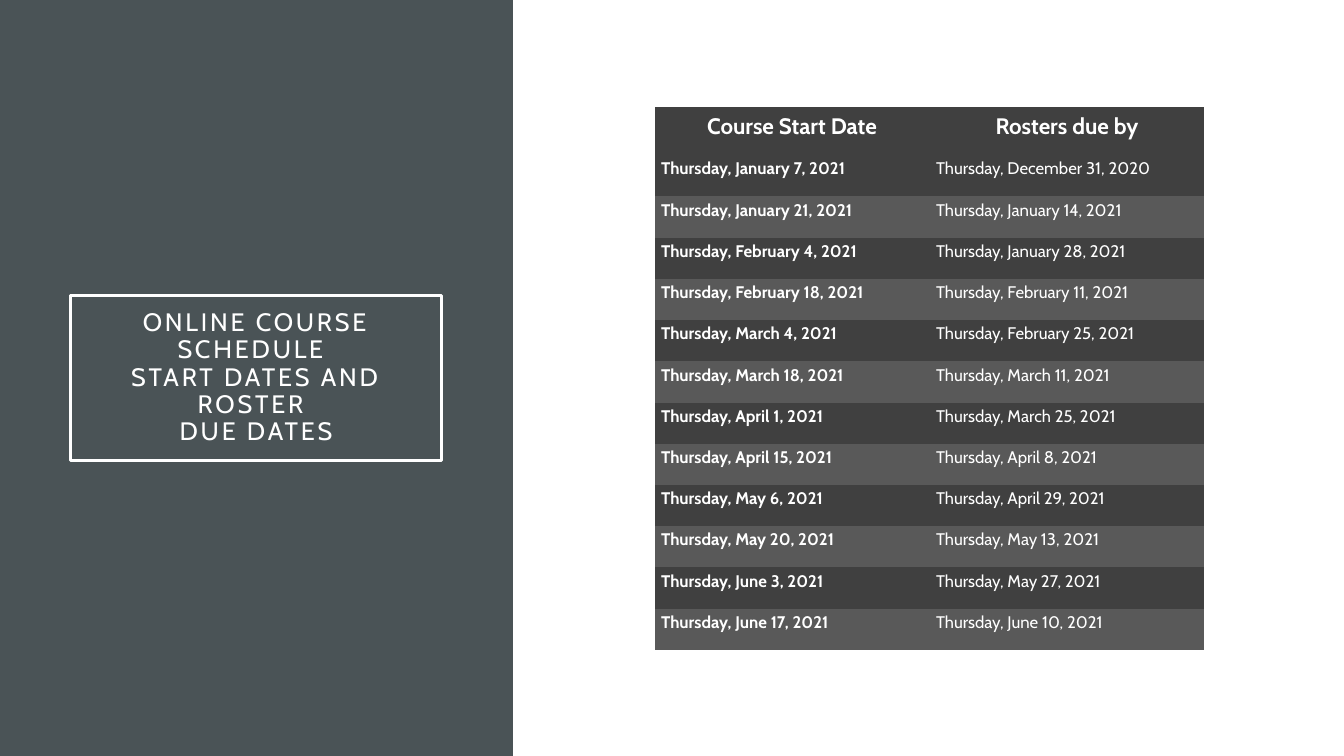
from lxml import etree
from pptx import Presentation
from pptx.dml.color import RGBColor
from pptx.enum import shapes, text
from pptx.oxml import parse_xml
from pptx.oxml.ns import nsdecls, qn
from pptx.util import Cm, Pt

WHITE = RGBColor(0xFF, 0xFF, 0xFF)
SLATE = RGBColor(0x4A, 0x53, 0x56)
DARK = RGBColor(0x40, 0x40, 0x40)
GREY = RGBColor(0x59, 0x59, 0x59)
FACE = "Cabin"
PLAIN = "{2D5ABB26-0587-4C30-8999-92F81FD0307C}"
TITLE = ["ONLINE COURSE SCHEDULE ", "START DATES AND ROSTER ", "DUE DATES"]
DATES = [
    ("Course Start Date", "Rosters due by"),
    ("Thursday, January 7, 2021", "Thursday, December 31, 2020"),
    ("Thursday, January 21, 2021", "Thursday, January 14, 2021"),
    ("Thursday, February 4, 2021", "Thursday, January 28, 2021"),
    ("Thursday, February 18, 2021", "Thursday, February 11, 2021"),
    ("Thursday, March 4, 2021", "Thursday, February 25, 2021"),
    ("Thursday, March 18, 2021", "Thursday, March 11, 2021"),
    ("Thursday, April 1, 2021", "Thursday, March 25, 2021"),
    ("Thursday, April 15, 2021", "Thursday, April 8, 2021"),
    ("Thursday, May 6, 2021", "Thursday, April 29, 2021"),
    ("Thursday, May 20, 2021", "Thursday, May 13, 2021"),
    ("Thursday, June 3, 2021", "Thursday, May 27, 2021"),
    ("Thursday, June 17, 2021", "Thursday, June 10, 2021"),
]


def add_run(para, words, size, bold=False):
    """Add one white run to a paragraph and return it."""
    run = para.add_run()
    run.text = words
    font = run.font
    font.name, font.size, font.bold = FACE, Pt(size), bold
    font.color.rgb = WHITE
    return run


def add_panel(slide, left, top, width, height):
    """Draw the slate panel with the framed title on it."""
    panel = slide.shapes.add_shape(
        shapes.MSO_SHAPE.RECTANGLE, left, top, width, height)
    panel.shadow.inherit = False
    panel.fill.solid()
    panel.fill.fore_color.rgb = SLATE
    panel.line.fill.background()

    title = slide.shapes.title
    panel._element.addnext(title._element)
    title.left, title.top = left + Cm(1.78), top + Cm(7.44)
    title.width, title.height = width - Cm(3.58), Cm(4.17)
    title.line.color.rgb = WHITE
    title.line.width = Pt(2.5)
    frame = title.text_frame
    frame.word_wrap = True
    frame.auto_size = text.MSO_AUTO_SIZE.NONE
    frame.vertical_anchor = text.MSO_ANCHOR.MIDDLE
    frame.margin_left = frame.margin_right = Cm(0.5)
    frame.margin_top = frame.margin_bottom = Cm(0.5)
    para = frame.paragraphs[0]
    para.alignment = text.PP_ALIGN.CENTER
    para.line_spacing = 0.9
    for i, words in enumerate(TITLE):
        if i:
            para.add_line_break()
        run = add_run(para, words, 18)
        run.font._element.set("spc", "200")


def fill_cell(cell, words, row, col):
    """Write and colour one table cell."""
    head = row == 0
    cell.margin_left, cell.margin_right = Cm(0.18), Cm(0.15)
    cell.margin_top, cell.margin_bottom = Cm(0.05), Cm(0.38)
    cell.vertical_anchor = text.MSO_ANCHOR.BOTTOM if head else text.MSO_ANCHOR.TOP
    cell.fill.solid()
    cell.fill.fore_color.rgb = GREY if row and row % 2 == 0 else DARK
    para = cell.text_frame.paragraphs[0]
    para.alignment = text.PP_ALIGN.CENTER if head else text.PP_ALIGN.LEFT
    para.line_spacing = 1.07
    add_run(para, words, 16 if head else 12, head or col == 0)
    if col == 0:
        edge = parse_xml(f'<a:lnL {nsdecls("a")} w="{Pt(1)}"/>')
        paint = etree.SubElement(edge, qn("a:solidFill"))
        etree.SubElement(paint, qn("a:srgbClr"), val=str(WHITE))
        cell._tc.get_or_add_tcPr().insert(0, edge)


def add_dates(slide, left, top, width, height):
    """Place the table of start and due dates in the given box."""
    count = len(DATES)
    table = slide.shapes.add_table(count, 2, left, top, width, height).table
    table.first_row = table.horz_banding = False
    table._tbl.tblPr.find(qn("a:tableStyleId")).text = PLAIN
    first = Cm(1.22)
    for col in table.columns:
        col.width = width // 2
    for i, row in enumerate(table.rows):
        row.height = (height - first) // (count - 1) if i else first
        for j, words in enumerate(DATES[i]):
            fill_cell(table.cell(i, j), words, i, j)


def main():
    """Build and save the course schedule slide."""
    deck = Presentation()
    deck.slide_width, deck.slide_height = Cm(33.87), Cm(19.05)
    slide = deck.slides.add_slide(deck.slide_layouts[5])
    add_panel(slide, 0, 0, Cm(12.93), deck.slide_height)
    add_dates(slide, Cm(16.48), Cm(2.69), Cm(13.86), Cm(13.69))
    deck.save("out.pptx")


if __name__ == "__main__":
    main()
